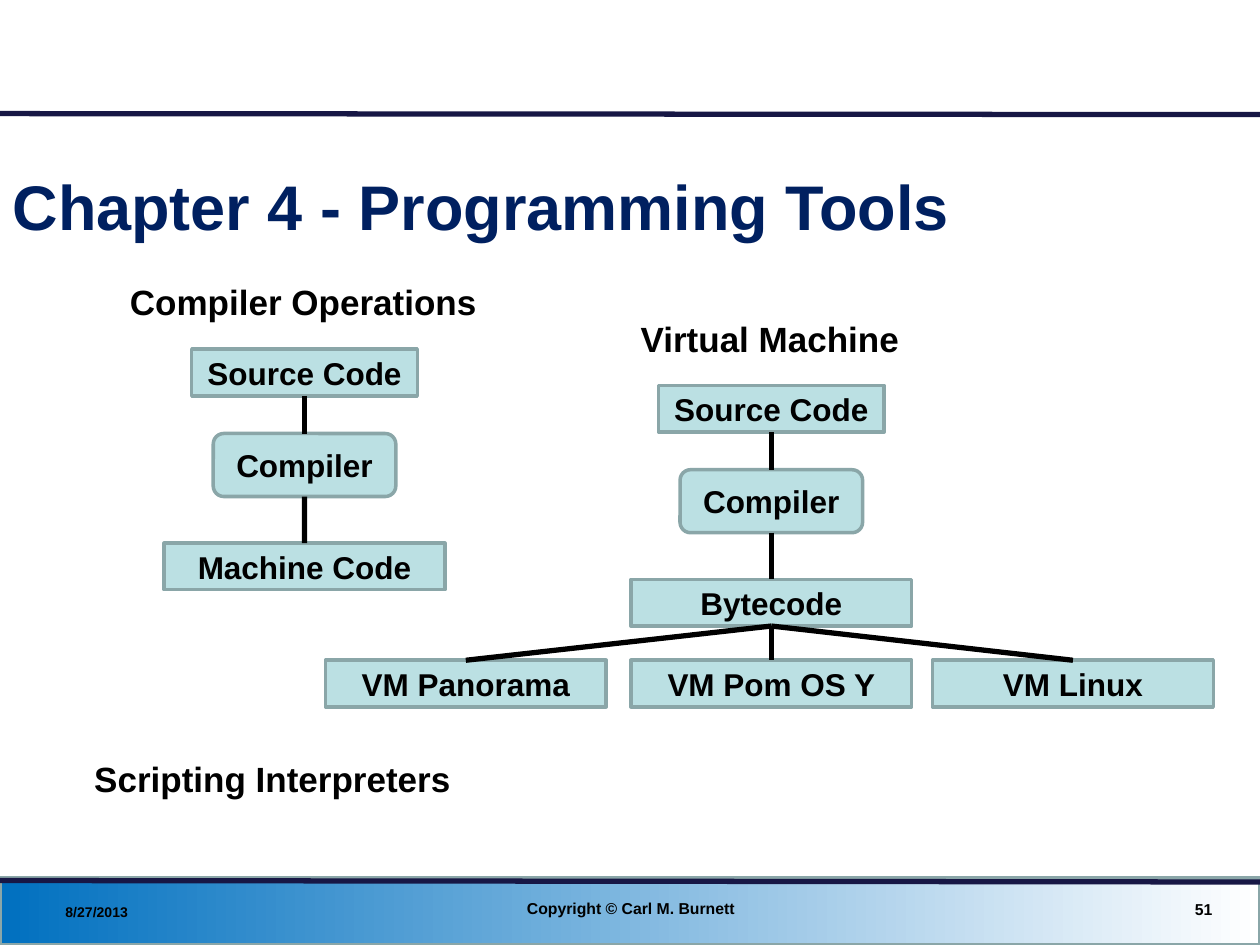
from lxml.etree import SubElement
from pptx import Presentation
from pptx.dml.color import RGBColor
from pptx.enum.shapes import MSO_CONNECTOR, MSO_SHAPE
from pptx.enum.text import MSO_ANCHOR, MSO_AUTO_SIZE, PP_ALIGN
from pptx.oxml.ns import qn
from pptx.util import Cm, Pt

NAVY = RGBColor(0x00, 0x20, 0x60)
RULE = RGBColor(0x17, 0x17, 0x45)
BLUE = RGBColor(0x00, 0x70, 0xC0)
WHITE = RGBColor(0xFF, 0xFF, 0xFF)
BLACK = RGBColor(0x00, 0x00, 0x00)
BOX_FILL = RGBColor(0xBB, 0xE0, 0xE3)
BOX_LINE = RGBColor(0x8A, 0xA6, 0xA8)

# Content (lengths in cm)
TITLE = "Chapter 4 - Programming Tools"
RULES = [(17.75, 17.78), (2.29, 2.31)]  # left and right height of each rule
FOOTERS = [  # text, left, top, width, height, size, alignment
    ("8/27/2013", 1.07, 18.03, 5.92, 0.69, 8, PP_ALIGN.LEFT),
    ("51", 18.77, 17.96, 5.92, 0.74, 9, PP_ALIGN.RIGHT),
    ("Copyright © Carl M. Burnett", 8.69, 17.93, 8.05, 0.74, 9, PP_ALIGN.CENTER),
]
CHAINS = [  # heading, heading width, centre, top of first box, labels
    ("Compiler Operations", 7.54, 6.14, 7.04,
     ["Source Code", "Compiler", "Machine Code"]),
    ("Virtual Machine", 5.77, 15.55, 7.77,
     ["Source Code", "Compiler", "Bytecode"]),
]
STEPS = [  # preset, offset from first box, width, height
    (MSO_SHAPE.RECTANGLE, 0, 4.55, 0.94),
    (MSO_SHAPE.ROUNDED_RECTANGLE, 1.7, 3.68, 1.27),
    (MSO_SHAPE.RECTANGLE, 3.91, 5.66, 0.94),
]
MACHINES = [("VM Panorama", 9.39), ("VM Pom OS Y", 15.55), ("VM Linux", 21.63)]
MACHINE_TOP = 13.31
HEADING_RISE, HEADING_HEIGHT = 1.5, 1.12
LAST_HEADING = ("Scripting Interpreters", 1.65, 15.14, 7.75)


def write(shape, text, size, color=BLACK, align=PP_ALIGN.LEFT,
          anchor=MSO_ANCHOR.MIDDLE):
    frame = shape.text_frame
    frame.text = text
    frame.vertical_anchor = anchor
    paragraph = frame.paragraphs[0]
    paragraph.alignment = align
    font = paragraph.runs[0].font
    font.name, font.size, font.bold = "Arial", Pt(size), True
    font.color.rgb = color


def add_text(shapes, text, left, top, width, height, size, align):
    box = shapes.add_textbox(Cm(left), Cm(top), Cm(width), Cm(height))
    box.text_frame.word_wrap = True
    write(box, text, size, align=align)


def add_heading(shapes, text, left, top, width):
    box = shapes.add_textbox(Cm(left), Cm(top), Cm(width), Cm(HEADING_HEIGHT))
    box.text_frame.word_wrap = False
    box.text_frame.auto_size = MSO_AUTO_SIZE.SHAPE_TO_FIT_TEXT
    write(box, text, 20, anchor=MSO_ANCHOR.TOP)


def outline(shape):
    shape.shadow.inherit = False
    shape.line.color.rgb = BOX_LINE
    shape.line.width = Pt(2)


def add_box(shapes, text, preset, center, top, width, height):
    box = shapes.add_shape(preset, Cm(center - width / 2), Cm(top),
                           Cm(width), Cm(height))
    outline(box)
    box.fill.solid()
    box.fill.fore_color.rgb = BOX_FILL
    box.text_frame.margin_left = box.text_frame.margin_right = 0
    write(box, text, 18, align=PP_ALIGN.CENTER)
    return box


def add_line(shapes, x1, y1, x2, y2, color):
    line = shapes.add_connector(MSO_CONNECTOR.STRAIGHT, x1, y1, x2, y2)
    line.line.color.rgb = color
    line.line.width = Pt(3)
    SubElement(line._element.spPr, qn("a:effectLst"))
    return line


def join(shapes, upper, lower):
    line = add_line(shapes, upper.left + upper.width // 2, upper.top + upper.height,
                    lower.left + lower.width // 2, lower.top, BLACK)
    line.begin_connect(upper, 2)
    line.end_connect(lower, 0)


presentation = Presentation()
presentation.slide_width, presentation.slide_height = Cm(25.4), Cm(19.05)
slide = presentation.slides.add_slide(presentation.slide_layouts[5])

# Footer band and rules
band = slide.shapes.add_shape(MSO_SHAPE.RECTANGLE, 0, Cm(17.7), Cm(25.4), Cm(1.35))
outline(band)
band.fill.gradient()
band.fill.gradient_angle = 0
for stop, position, color in zip(band.fill.gradient_stops, (0, 1), (BLUE, WHITE)):
    stop.position = position
    stop.color.rgb = color
for left_height, right_height in RULES:
    add_line(slide.shapes, 0, Cm(left_height), Cm(25.4), Cm(right_height), RULE)

# Title and footer texts
title = slide.shapes.title
title.left, title.top, title.width, title.height = 0, Cm(2.9), Cm(24.33), Cm(2.46)
write(title, TITLE, 36, NAVY)
title.text_frame.auto_size = MSO_AUTO_SIZE.NONE
for footer in FOOTERS:
    add_text(slide.shapes, *footer)

# One group for each chain of steps
for heading, heading_width, center, top, labels in CHAINS:
    shapes = slide.shapes.add_group_shape().shapes
    add_heading(shapes, heading, center - heading_width / 2, top - HEADING_RISE,
                heading_width)
    boxes = [add_box(shapes, label, preset, center, top + offset, width, height)
             for label, (preset, offset, width, height) in zip(labels, STEPS)]
    for upper, lower in zip(boxes, boxes[1:]):
        join(shapes, upper, lower)

# Virtual machines below the bytecode, in the last group
preset, _, width, height = STEPS[-1]
for label, center in MACHINES:
    machine = add_box(shapes, label, preset, center, MACHINE_TOP, width, height)
    join(shapes, boxes[-1], machine)

add_heading(slide.shapes, *LAST_HEADING)

presentation.save("out.pptx")
